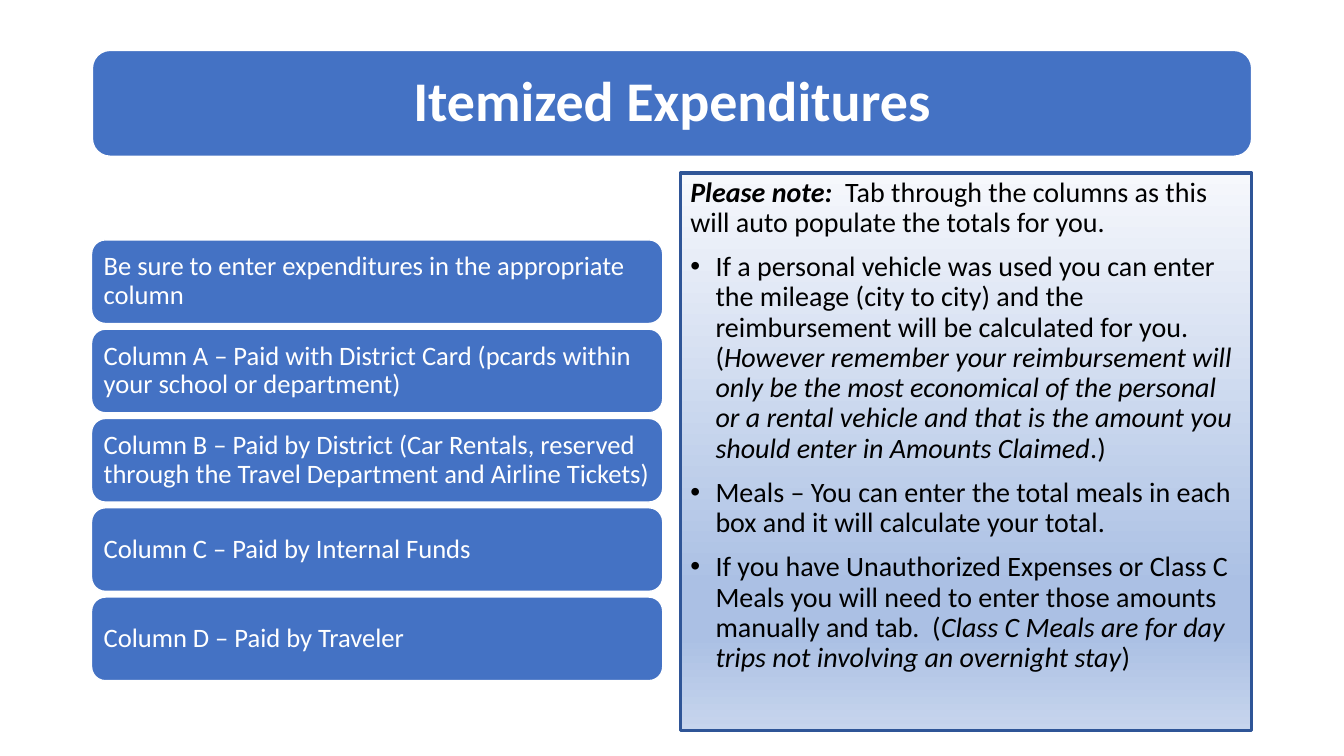
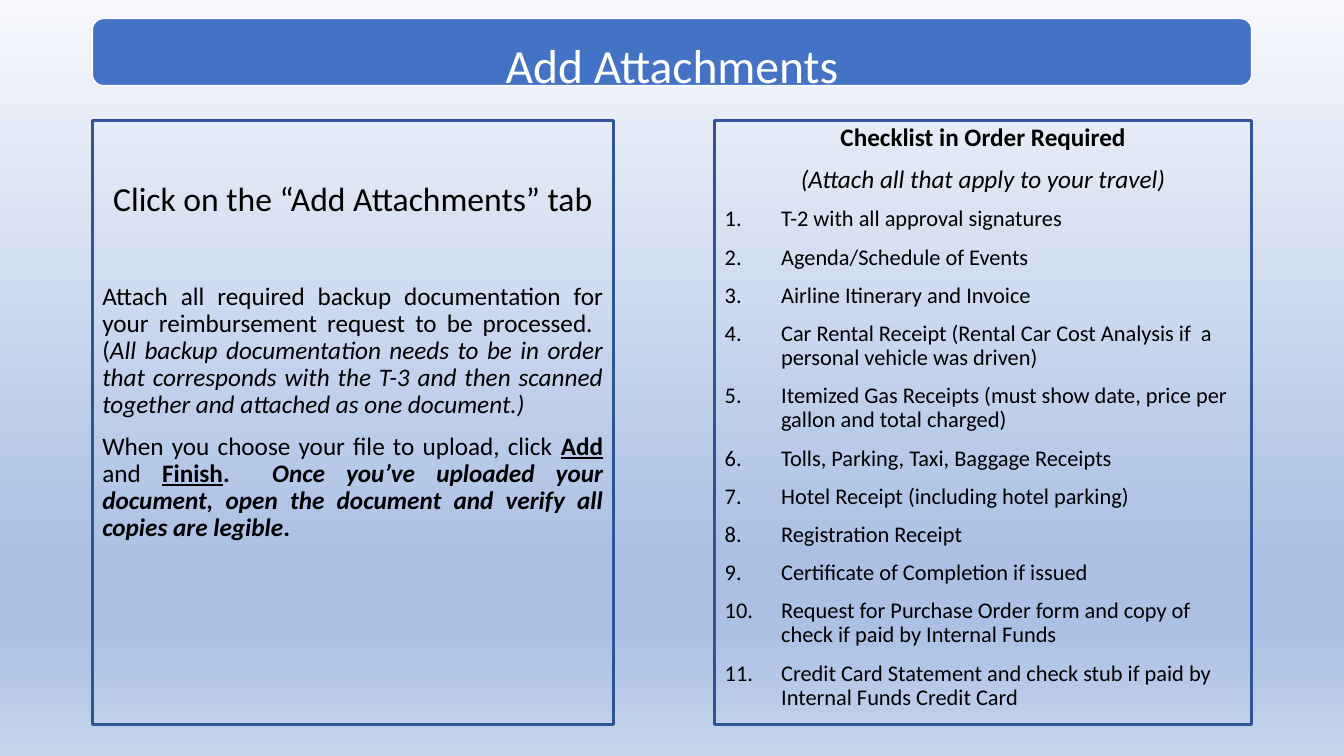
from lxml import etree
from pptx import Presentation
from pptx.dml.color import RGBColor
from pptx.enum.shapes import MSO_SHAPE
from pptx.enum.text import MSO_ANCHOR, PP_ALIGN
from pptx.oxml.ns import qn
from pptx.util import Inches, Pt

ROUNDED, RECT = MSO_SHAPE.ROUNDED_RECTANGLE, MSO_SHAPE.RECTANGLE
TOP, MIDDLE = MSO_ANCHOR.TOP, MSO_ANCHOR.MIDDLE
LEFT, CENTER, JUSTIFY = PP_ALIGN.LEFT, PP_ALIGN.CENTER, PP_ALIGN.JUSTIFY


def color(value):
    return RGBColor.from_string(value)


class Deck:
    COLS, ROWS = 160, 90
    MARGIN, CONTENT = 11, 138
    FONT = "Calibri"
    BLUE, NAVY, WHITE, BLACK = "4472C4", "2F5597", "FFFFFF", "000000"
    GRADIENT = ((0, "F6F8FC"), (74, "ABC0E4"), (83, "ABC0E4"), (100, "C7D5ED"))

    def __init__(self):
        self.prs = Presentation()
        self.prs.slide_width = Inches(13.33)
        self.prs.slide_height = Inches(7.5)
        self.s = None

    def x(self, cols):
        return int(self.prs.slide_width * cols / self.COLS)

    def y(self, rows):
        return int(self.prs.slide_height * rows / self.ROWS)

    def slide(self, shaded=False):
        self.s = self.prs.slides.add_slide(self.prs.slide_layouts[6])
        if shaded:
            self.shade(self.s.background.fill, self.s._element)

    def shade(self, fill, element):
        fill.gradient()
        fill.gradient_angle = 270
        stops = next(element.iter(qn("a:gsLst")))
        for stop in list(stops):
            stops.remove(stop)
        for position, value in self.GRADIENT:
            stop = etree.SubElement(stops, qn("a:gs"), pos=str(position * 1000))
            etree.SubElement(stop, qn("a:srgbClr"), val=value)

    def box(self, kind, at, line, width, anchor, insets):
        left, top, cols, rows = at
        sp = self.s.shapes.add_shape(
            kind, self.x(left), self.y(top), self.x(cols), self.y(rows))
        sp.shadow.inherit = False
        sp.line.color.rgb = color(line)
        sp.line.width = Pt(width)
        tf = sp.text_frame
        tf.word_wrap = True
        tf.vertical_anchor = anchor
        side, upper, lower = insets
        tf.margin_left = tf.margin_right = Inches(side)
        tf.margin_top, tf.margin_bottom = Inches(upper), Inches(lower)
        return sp

    def paragraph(self, p, runs, size, ink, align=LEFT, before=0,
                  bullet=None, indent=0):
        p.alignment = align
        p.line_spacing = 0.9
        p.space_before = Pt(before)
        for text, style in [(runs, "")] if isinstance(runs, str) else runs:
            r = p.add_run()
            r.text = text
            r.font.name = self.FONT
            r.font.size = Pt(size)
            r.font.color.rgb = color(ink)
            r.font.bold = "b" in style
            r.font.italic = "i" in style
            r.font.underline = "u" in style
        if bullet:
            pPr = p._p.get_or_add_pPr()
            pPr.set("marL", str(Inches(indent)))
            pPr.set("indent", str(-Inches(indent)))
            if bullet == "number":
                etree.SubElement(pPr, qn("a:buAutoNum"), type="arabicPeriod")
            else:
                etree.SubElement(pPr, qn("a:buFont"), typeface="Arial")
                etree.SubElement(pPr, qn("a:buChar"), char=bullet)

    def band(self, at, runs, size, align=LEFT, anchor=MIDDLE,
             insets=(0.08, 0.08, 0.08)):
        sp = self.box(ROUNDED, at, self.WHITE, 1, anchor, insets)
        sp.fill.solid()
        sp.fill.fore_color.rgb = color(self.BLUE)
        self.paragraph(sp.text_frame.paragraphs[0], runs, size, self.WHITE, align)

    def title(self, top, rows, runs, size, **options):
        self.band((self.MARGIN, top, self.CONTENT, rows), runs, size, CENTER, **options)

    def steps(self, left, top, cols, rows, pitch, texts):
        for i, text in enumerate(texts):
            self.band((left, top + i * pitch, cols, rows), text, 19)

    def panel(self, at, paragraphs, shaded=False, upper=0.05):
        sp = self.box(RECT, at, self.NAVY, 2.25, TOP, (0.1, upper, 0.05))
        if shaded:
            self.shade(sp.fill, sp._element)
        else:
            sp.fill.background()
        tf = sp.text_frame
        for i, (runs, size, options) in enumerate(paragraphs):
            p = tf.add_paragraph() if i else tf.paragraphs[0]
            self.paragraph(p, runs, size, self.BLACK, **{"before": 10, **options})


def itemized_expenditures(deck):
    deck.slide()
    deck.title(6, 12.6, [("Itemized Expenditures", "b")], 40)
    deck.steps(10.9, 28.56, 68, 9.96, 10.63, [
        "Be sure to enter expenditures in the appropriate column",
        "Column A – Paid with District Card (pcards within your school or department)",
        "Column B – Paid by District (Car Rentals, reserved through the Travel "
        "Department and Airline Tickets)",
        "Column C – Paid by Internal Funds",
        "Column D – Paid by Traveler",
    ])
    bullet = {"bullet": "•", "indent": 0.25}
    deck.panel((81, 20.6, 68, 66.4), [
        ([("Please note:  ", "bi"),
          ("Tab through the columns as this will auto populate the totals for you.", "")],
         20, {}),
        ([("If a personal vehicle was used you can enter the mileage (city to city) "
           "and the reimbursement will be calculated for you.  (", ""),
          ("However remember your reimbursement will only be the most economical of "
           "the personal or a rental vehicle and that is the amount you should enter "
           "in Amounts Claimed", "i"),
          (".)", "")], 20, bullet),
        ("Meals – You can enter the total meals in each box and it will calculate "
         "your total.", 20, bullet),
        ([("If you have Unauthorized Expenses or Class C Meals you will need to enter "
           "those amounts manually and tab.  (", ""),
          ("Class C Meals are for day trips not involving an overnight stay", "i"),
          (")", "")], 20, bullet),
    ], shaded=True)


def add_attachments(deck):
    deck.slide(shaded=True)
    deck.title(2.2, 8, "Add Attachments", 34, anchor=TOP, insets=(0.08, 0.2, 0))
    deck.panel((11, 14.3, 62, 72), [
        ("Click on the “Add Attachments” tab", 24, {"align": CENTER}),
        ([("Attach all required backup documentation for your reimbursement request "
           "to be processed.  (", ""),
          ("All backup documentation needs to be in order that corresponds with the "
           "T-3 and then scanned together and attached as one document.)", "i")],
         18, {"align": JUSTIFY, "before": 46}),
        ([("When you choose your file to upload, click ", ""), ("Add", "bu"),
          (" and ", ""), ("Finish", "bu"), (".  ", "b"),
          ("Once you’ve uploaded your document, open the document and verify all "
           "copies are legible", "bi"),
          (".", "b")], 18, {"align": JUSTIFY}),
    ], upper=0.62)
    checklist = [
        "T-2 with all approval signatures",
        "Agenda/Schedule of Events",
        "Airline Itinerary and Invoice",
        "Car Rental Receipt (Rental Car Cost Analysis if  a personal vehicle was driven)",
        "Itemized Gas Receipts (must show date, price per gallon and total charged)",
        "Tolls, Parking, Taxi, Baggage Receipts",
        "Hotel Receipt (including hotel parking)",
        "Registration Receipt",
        "Certificate of Completion if issued",
        "Request for Purchase Order form and copy of check if paid by Internal Funds",
        "Credit Card Statement and check stub if paid by Internal Funds Credit Card",
    ]
    deck.panel((85.1, 14.3, 63.9, 72), [
        ([("Checklist in Order Required", "b")], 18, {"align": CENTER}),
        ([("(Attach all that apply to your travel)", "i")], 18, {"align": CENTER}),
        *((text, 16, {"bullet": "number", "indent": 0.56}) for text in checklist),
    ])


def main():
    deck = Deck()
    itemized_expenditures(deck)
    add_attachments(deck)
    deck.prs.save("out.pptx")


if __name__ == "__main__":
    main()
